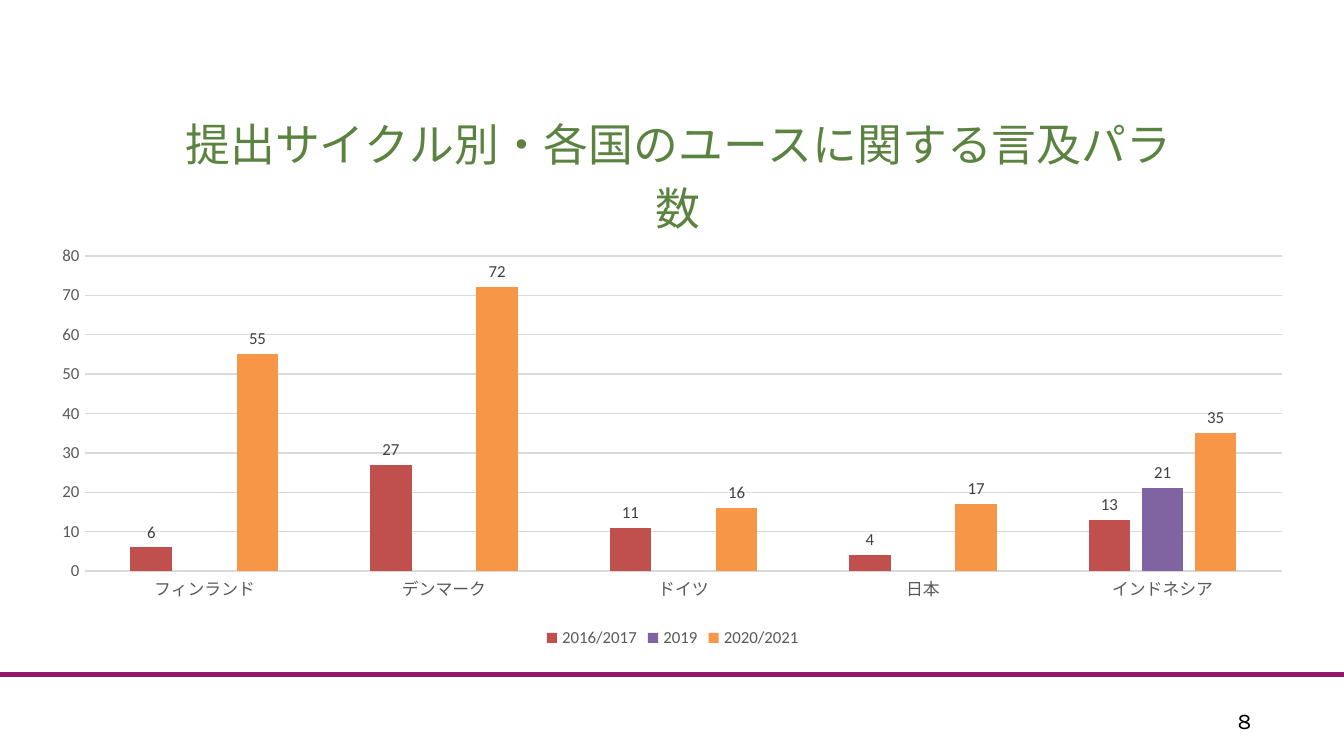
from lxml import etree
from pptx import Presentation
from pptx.chart.data import CategoryChartData
from pptx.dml.color import RGBColor
from pptx.enum.chart import XL_CHART_TYPE as ChartType
from pptx.enum.chart import XL_LABEL_POSITION as LabelPosition
from pptx.enum.chart import XL_LEGEND_POSITION as LegendPosition
from pptx.enum.chart import XL_TICK_MARK as TickMark
from pptx.enum.shapes import MSO_CONNECTOR as Connector
from pptx.enum.text import MSO_ANCHOR as Anchor
from pptx.enum.text import PP_ALIGN as Align
from pptx.oxml.ns import qn
from pptx.util import Pt


def color(value):
    return RGBColor.from_string(value)


class SlideBuilder:
    latin = "Calibri"
    japanese = "Noto Sans CJK JP"
    gray = "595959"
    rule = "D9D9D9"

    def __init__(self, slide):
        self.slide = slide

    def style(self, font, size, hue, name):
        font.size = Pt(size)
        font.bold = False
        font.color.rgb = color(hue)
        font.name = name
        if name == self.japanese:
            latin = font._element.find(qn("a:latin"))
            east_asian = etree.Element(qn("a:ea"), typeface=name)
            latin.addnext(east_asian)

    def stroke(self, line, hue, width):
        line.color.rgb = color(hue)
        line.width = Pt(width)

    def line(self, left, top, right, bottom, hue, width):
        connector = self.slide.shapes.add_connector(
            Connector.STRAIGHT, Pt(left), Pt(top), Pt(right), Pt(bottom))
        self.stroke(connector.line, hue, width)
        etree.SubElement(connector._element.spPr, qn("a:effectLst"))

    def text(self, left, top, width, height, words, size, hue, name):
        box = self.slide.shapes.add_textbox(
            Pt(left), Pt(top), Pt(width), Pt(height))
        frame = box.text_frame
        frame.word_wrap = True
        frame.vertical_anchor = Anchor.MIDDLE
        paragraph = frame.paragraphs[0]
        paragraph.alignment = Align.CENTER
        run = paragraph.add_run()
        run.text = words
        self.style(run.font, size, hue, name)

    def layout(self, parent, **places):
        layout = parent.find(qn("c:layout"))
        if layout is None:
            layout = etree.Element(qn("c:layout"))
            text = parent.find(qn("c:tx"))
            if text is None:
                parent.insert(0, layout)
            else:
                text.addnext(layout)
        manual = etree.SubElement(layout, qn("c:manualLayout"))
        for tag, value in places.items():
            etree.SubElement(manual, qn(f"c:{tag}"), val=str(value))

    def chart(self, left, top, width, height, categories, series):
        data = CategoryChartData()
        data.categories = categories
        for label, values, _ in series:
            data.add_series(label, values)
        chart = self.slide.shapes.add_chart(
            ChartType.COLUMN_CLUSTERED, Pt(left), Pt(top), Pt(width),
            Pt(height), data).chart
        self.style(chart.font, 10, "000000", self.latin)
        plot = chart.plots[0]
        plot.gap_width = 219
        plot.overlap = -27
        plot.vary_by_categories = False
        for bars, (_, _, hue) in zip(plot.series, series):
            bars.format.fill.solid()
            bars.format.fill.fore_color.rgb = color(hue)
            labels = bars.data_labels
            labels.show_value = True
            labels.position = LabelPosition.OUTSIDE_END
            self.style(labels.font, 9, "404040", self.latin)
        self.axes(chart)
        chart.has_legend = True
        chart.legend.position = LegendPosition.BOTTOM
        chart.legend.include_in_layout = False
        self.style(chart.legend.font, 9, self.gray, self.latin)
        self.layout(chart._chartSpace.chart.plotArea, layoutTarget="inner",
                    xMode="edge", yMode="edge", x=0.037, y=0.33,
                    w=0.943, h=0.532)
        return chart

    def axes(self, chart):
        for axis, name in ((chart.category_axis, self.japanese),
                           (chart.value_axis, self.latin)):
            axis.major_tick_mark = TickMark.NONE
            axis.minor_tick_mark = TickMark.NONE
            self.style(axis.tick_labels.font, 9, self.gray, name)
        self.stroke(chart.category_axis.format.line, self.rule, 0.75)
        values = chart.value_axis
        values.minimum_scale = 0
        values.maximum_scale = 80
        values.major_unit = 10
        values.format.line.fill.background()
        values.has_major_gridlines = True
        self.stroke(values.major_gridlines.format.line, self.rule, 0.75)

    def chart_title(self, chart, words):
        chart.has_title = True
        title = chart.chart_title
        title.include_in_layout = False
        paragraph = title.text_frame.paragraphs[0]
        paragraph.alignment = Align.CENTER
        run = paragraph.add_run()
        run.text = words
        self.style(run.font, 24, "5B8340", self.japanese)
        self.layout(title._element, xMode="edge", yMode="edge", x=0.11, y=0.06)


def main():
    deck = Presentation()
    deck.slide_width, deck.slide_height = Pt(720), Pt(405)
    builder = SlideBuilder(deck.slides.add_slide(deck.slide_layouts[6]))
    builder.line(0, 361.4, 720, 361.4, "93166F", 3)
    builder.text(649.4, 375.1, 34.6, 21.6, "8", 12, "000000", "Karla")
    countries = ["フィンランド", "デンマーク", "ドイツ", "日本", "インドネシア"]
    cycles = [
        ("2016/2017", (6, 27, 11, 4, 13), "C0504D"),
        ("2019", (None, None, None, None, 21), "8064A2"),
        ("2020/2021", (55, 72, 16, 17, 35), "F79646"),
    ]
    paragraph_counts = builder.chart(20.2, 32.4, 680.4, 317.5, countries, cycles)
    builder.chart_title(paragraph_counts,
                        "提出サイクル別・各国のユースに関する言及パラ数")
    deck.save("out.pptx")


if __name__ == "__main__":
    main()
